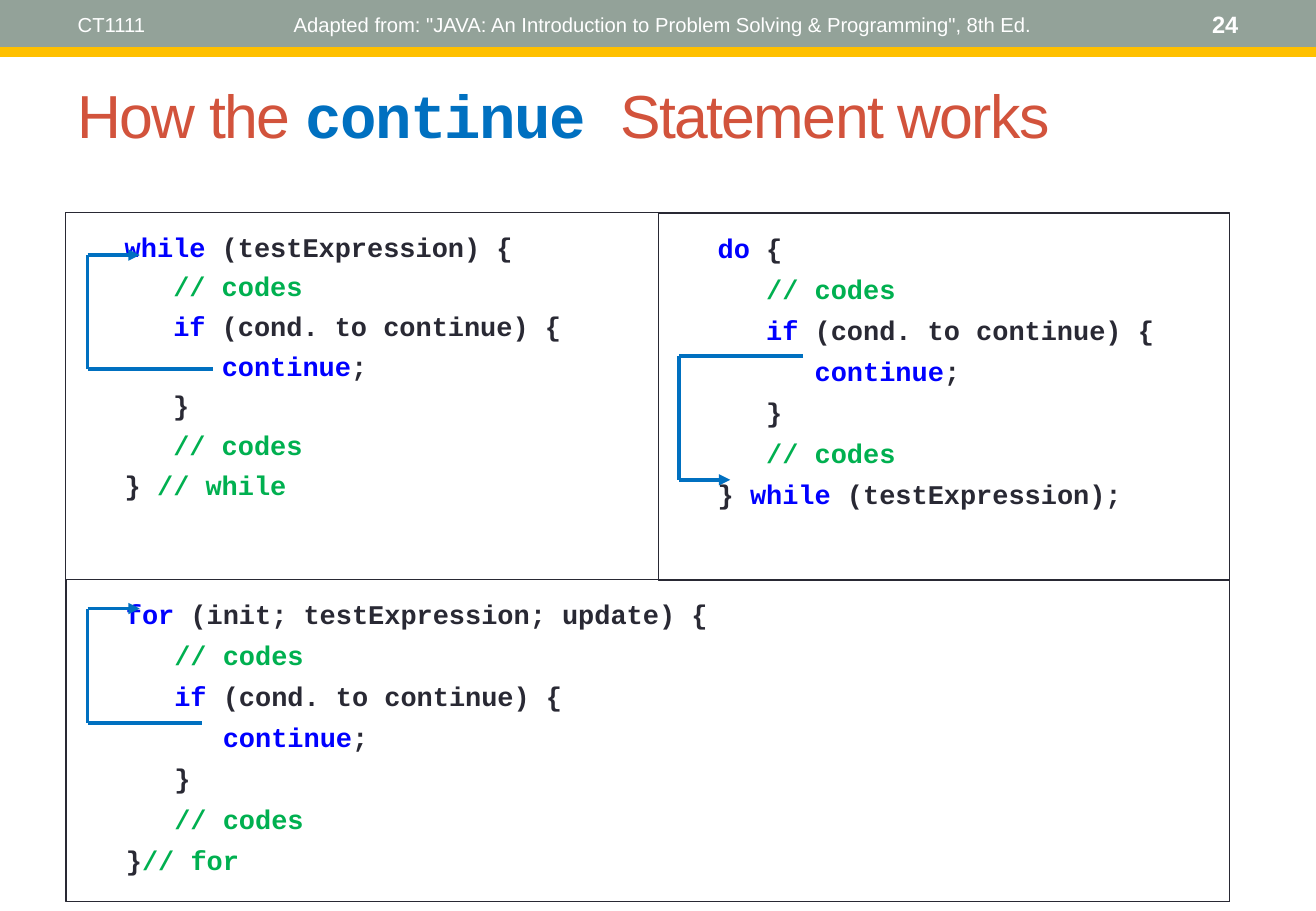
from lxml.etree import SubElement
from pptx import Presentation
from pptx.dml.color import RGBColor
from pptx.enum.shapes import MSO_CONNECTOR, MSO_SHAPE
from pptx.enum.text import MSO_ANCHOR, PP_ALIGN
from pptx.oxml.ns import qn
from pptx.util import Inches, Pt

WIDTH, HEIGHT = Inches(10.83), Inches(7.5)
INK, KEYWORD, COMMENT = "292934", "0000FF", "00B050"
WHITE, BLUE, RED, GOLD, SAGE = "FFFFFF", "0070C0", "D2533C", "FFC000", "93A299"
CODE = {"name": "Courier New", "size": Pt(16), "bold": True}
TITLE = {"name": "Arial", "size": Pt(36), "bold": False}
TITLE_CODE = {**TITLE, "name": "Courier New", "bold": True}
HEADER = {"name": "Arial", "size": Pt(12), "bold": False}
PAGE = {"name": "Arial", "size": Pt(14), "bold": True}


def rgb(value):
    """Turn a hex string into a colour."""
    return RGBColor.from_string(value)


def col(share):
    """Return a horizontal length as a percentage of the slide width."""
    return round(WIDTH * share / 100)


def row(share):
    """Return a vertical length as a percentage of the slide height."""
    return round(HEIGHT * share / 100)


def box(x, y, w, h):
    """Return a frame given in percentages of the slide."""
    return col(x), row(y), col(w), row(h)


def add_run(p, text, color, font):
    """Append a formatted run to a paragraph."""
    r = p.add_run()
    r.text = text
    for name, value in font.items():
        setattr(r.font, name, value)
    r.font.color.rgb = rgb(color)
    return r


def add_text(s, frame, align=PP_ALIGN.LEFT):
    """Add a vertically centred text box and return its paragraph."""
    tf = s.shapes.add_textbox(*frame).text_frame
    tf.word_wrap = True
    tf.vertical_anchor = MSO_ANCHOR.MIDDLE
    p = tf.paragraphs[0]
    p.alignment = align
    return p


def add_rect(s, frame):
    """Add a rectangle without shadow."""
    sp = s.shapes.add_shape(MSO_SHAPE.RECTANGLE, *frame)
    sp.shadow.inherit = False
    return sp


def add_line(shapes, start, end, color, width, arrow=False):
    """Add a straight line between two grid points, with an optional arrowhead."""
    line = shapes.add_connector(MSO_CONNECTOR.STRAIGHT, col(start[0]), row(start[1]),
                                col(end[0]), row(end[1]))
    line.line.color.rgb = rgb(color)
    line.line.width = Pt(width)
    if arrow:
        SubElement(line.line._get_or_add_ln(), qn("a:tailEnd"), type="triangle")
    SubElement(line._element.spPr, qn("a:effectLst"))


def add_jump(s, start, bend, target):
    """Add the grouped three-part arrow from continue to the loop test."""
    points = [start, (bend, start[1]), (bend, target[1]), target]
    shapes = s.shapes.add_group_shape().shapes
    for i, (a, b) in enumerate(zip(points, points[1:])):
        add_line(shapes, a, b, BLUE, 2.25, arrow=i == 2)


def loop_code(first, last):
    """Wrap the common loop body in its opening and closing lines."""
    comment = [("     ", INK), ("// codes", COMMENT)]
    return [
        first,
        comment,
        [("     ", INK), ("if", KEYWORD), (" (cond. to continue) {", INK)],
        [("        ", INK), ("continue", KEYWORD), (";", INK)],
        [("     }", INK)],
        comment,
        last,
    ]


def add_panel(s, frame, lines, gap):
    """Add an outlined panel of coloured code."""
    sp = add_rect(s, frame)
    sp.fill.background()
    sp.line.color.rgb = rgb(INK)
    sp.line.width = Pt(0.75)
    tf = sp.text_frame
    insets = {"margin_left": 0.22, "margin_top": 0.13, "margin_right": 0.1, "margin_bottom": 0.1}
    for name, value in insets.items():
        setattr(tf, name, Inches(value))
    tf.word_wrap = True
    tf.vertical_anchor = MSO_ANCHOR.TOP
    for i, runs in enumerate(lines):
        p = tf.add_paragraph() if i else tf.paragraphs[0]
        p.alignment = PP_ALIGN.LEFT
        p.line_spacing = 1.06
        p.space_before = Pt(gap if i else 0)
        for text, color in runs:
            add_run(p, text, color, CODE)


def add_header(s):
    """Add the top band with course, source and page number."""
    band = add_rect(s, box(0, 0, 100, 5.33))
    band.fill.solid()
    band.fill.fore_color.rgb = rgb(SAGE)
    band.line.fill.background()
    add_line(s.shapes, (0, 5.73), (100, 5.73), GOLD, 6)
    source = 'Adapted from: "JAVA: An Introduction to Problem Solving & Programming", 8th Ed.'
    for x, w, text, align, font in [
        (5, 31.67, "CT1111", PP_ALIGN.LEFT, HEADER),
        (18.2, 64.36, source, PP_ALIGN.CENTER, HEADER),
        (83.38, 11.63, "24", PP_ALIGN.RIGHT, PAGE),
    ]:
        add_run(add_text(s, box(x, 0.27, w, 4.8), align), text, WHITE, font)


def add_title(s):
    """Add the title with its code word."""
    p = add_text(s, box(5, 5.33, 90, 14.4))
    for text, color, font in [
        ("How the ", RED, TITLE),
        ("continue ", BLUE, TITLE_CODE),
        ("Statement works", RED, TITLE),
    ]:
        r = add_run(p, text, color, font)
        r._r.get_or_add_rPr().set("spc", "-100")


def main():
    """Build and save the slide."""
    prs = Presentation()
    prs.slide_width, prs.slide_height = WIDTH, HEIGHT
    s = prs.slides.add_slide(prs.slide_layouts[6])
    add_header(s)
    add_title(s)
    while_code = loop_code([("  while", KEYWORD), (" (testExpression) {", INK)],
                           [("  }", INK), (" // while", COMMENT)])
    do_code = loop_code([("  do", KEYWORD), (" {", INK)],
                        [("  } ", INK), ("while", KEYWORD), (" (testExpression);", INK)])
    for_code = loop_code([("  for", KEYWORD), (" (init; testExpression; update) {", INK)],
                         [("  }", INK), ("// for", COMMENT)])
    add_panel(s, box(5, 23.33, 88.46, 75.6), while_code, 3.2)
    add_panel(s, box(50.05, 23.47, 43.4, 40.27), do_code, 4)
    add_panel(s, box(5.08, 63.6, 88.37, 35.33), for_code, 4)
    add_jump(s, (16.16, 40.53), 6.65, (10.62, 28))
    add_jump(s, (61.03, 39.07), 51.62, (55.49, 52.67))
    add_jump(s, (15.33, 79.33), 6.65, (10.62, 66.8))
    prs.save("out.pptx")


if __name__ == "__main__":
    main()
